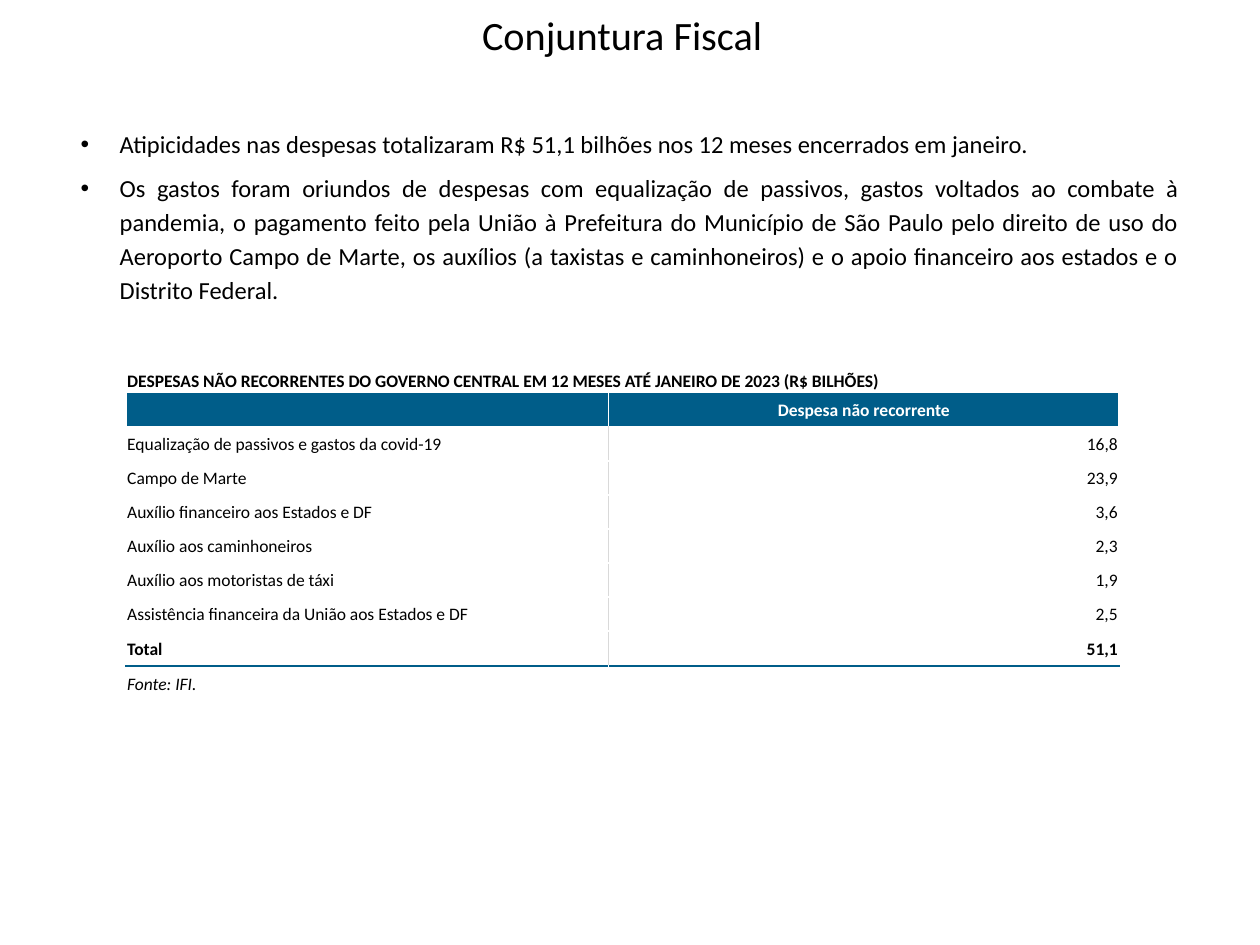
"""Build the fiscal outlook slide with its table of non-recurring expenses."""
from lxml.etree import SubElement
from pptx import Presentation
from pptx.dml.color import RGBColor
from pptx.enum.text import MSO_ANCHOR, MSO_AUTO_SIZE, PP_ALIGN
from pptx.oxml.ns import qn
from pptx.util import Inches, Pt

BLACK = RGBColor(0x00, 0x00, 0x00)
WHITE = RGBColor(0xFF, 0xFF, 0xFF)
BLUE = RGBColor(0x00, 0x5D, 0x89)
GREY = RGBColor(0xD9, 0xD9, 0xD9)


def write(paragraph, text, size, color=BLACK, **styles):
    run = paragraph.add_run()
    run.text = text
    formats = {"name": "Calibri", "size": Pt(size), "bold": False, **styles}
    for name, value in formats.items():
        setattr(run.font, name, value)
    run.font.color.rgb = color


def add_borders(cell, borders):
    properties = cell._tc.get_or_add_tcPr()
    for side in "LRTB":
        if side in borders:
            color, width = borders[side]
            line = SubElement(properties, qn(f"a:ln{side}"), w=str(Pt(width)))
            fill = SubElement(line, qn("a:solidFill"))
            SubElement(fill, qn("a:srgbClr"), val=str(color))


presentation = Presentation()
presentation.slide_width = Inches(10)
presentation.slide_height = Inches(7.5)
slide = presentation.slides.add_slide(presentation.slide_layouts[1])

heading = slide.shapes.title
heading.left, heading.top = Inches(2.96), Inches(0)
heading.width, heading.height = Inches(3.96), Inches(0.59)
heading.text_frame.vertical_anchor = MSO_ANCHOR.MIDDLE
heading_line = heading.text_frame.paragraphs[0]
heading_line.alignment = PP_ALIGN.CENTER
heading_line.line_spacing = 0.9
write(heading_line, "Conjuntura Fiscal", 23)

findings = [
    "Atipicidades nas despesas totalizaram R$ 51,1 bilhões nos 12 meses encerrados em janeiro.",
    "Os gastos foram oriundos de despesas com equalização de passivos, gastos voltados ao "
    "combate à pandemia, o pagamento feito pela União à Prefeitura do Município de São Paulo "
    "pelo direito de uso do Aeroporto Campo de Marte, os auxílios (a taxistas e caminhoneiros) "
    "e o apoio financeiro aos estados e o Distrito Federal.",
]
analysis = slide.placeholders[1]
analysis.left, analysis.top = Inches(0.54), Inches(0.94)
analysis.width, analysis.height = Inches(8.92), Inches(1.54)
analysis_frame = analysis.text_frame
analysis_frame.auto_size = MSO_AUTO_SIZE.SHAPE_TO_FIT_TEXT
finding_format = {
    "alignment": PP_ALIGN.JUSTIFY,
    "line_spacing": 1.15,
    "space_before": Pt(0),
    "space_after": Pt(6),
}
for index, finding in enumerate(findings):
    paragraph = analysis_frame.add_paragraph() if index else analysis_frame.paragraphs[0]
    for name, value in finding_format.items():
        setattr(paragraph, name, value)
    indents = paragraph._p.get_or_add_pPr()
    indents.set("marL", str(Inches(0.31)))
    indents.set("indent", str(Inches(-0.31)))
    bullet = SubElement(indents, qn("a:buChar"))
    bullet.set("char", "•")
    write(paragraph, finding, 14)

expense_rows = [
    ("DESPESAS NÃO RECORRENTES DO GOVERNO CENTRAL EM 12 MESES ATÉ JANEIRO DE 2023 (R$ BILHÕES)", ""),
    ("", "Despesa não recorrente"),
    ("Equalização de passivos e gastos da covid-19", "16,8"),
    ("Campo de Marte", "23,9"),
    ("Auxílio financeiro aos Estados e DF", "3,6"),
    ("Auxílio aos caminhoneiros", "2,3"),
    ("Auxílio aos motoristas de táxi", "1,9"),
    ("Assistência financeira da União aos Estados e DF", "2,5"),
    ("Total", "51,1"),
    ("Fonte: IFI.", ""),
]
CAPTION, HEADER, TOTAL, SOURCE = 0, 1, 8, 9
expenses = slide.shapes.add_table(
    len(expense_rows), 2, Inches(1), Inches(2.83), Inches(7.88), Inches(2.74)
).table
expenses.first_row = False
expenses.horz_banding = False
expenses.columns[0].width = Inches(3.83)
expenses.columns[1].width = Inches(4.05)
cell_format = {
    "margin_left": Inches(0.01),
    "margin_right": Inches(0.01),
    "margin_top": Inches(0.01),
    "margin_bottom": Inches(0),
}

for row, texts in enumerate(expense_rows):
    expenses.rows[row].height = Inches(0.27 if HEADER < row < TOTAL else 0.28)
    for column, text in enumerate(texts):
        cell = expenses.cell(row, column)
        for name, value in cell_format.items():
            setattr(cell, name, value)
        cell.vertical_anchor = MSO_ANCHOR.BOTTOM if row == CAPTION else MSO_ANCHOR.MIDDLE

        borders = {}
        if HEADER <= row <= TOTAL:
            borders["L" if column else "R"] = (WHITE if row == HEADER else GREY, 1)
        if row == HEADER:
            borders["B"] = (WHITE, 1)
        if row == TOTAL:
            borders["B"] = (BLUE, 1.5)
        if row == SOURCE:
            borders["T"] = (BLUE, 1.5)
        add_borders(cell, borders)
        cell.fill.solid()
        cell.fill.fore_color.rgb = BLUE if row == HEADER else WHITE

        paragraph = cell.text_frame.paragraphs[0]
        if row == HEADER:
            paragraph.alignment = PP_ALIGN.CENTER
        elif column:
            paragraph.alignment = PP_ALIGN.RIGHT
        if text:
            write(
                paragraph, text, 10, WHITE if row == HEADER else BLACK,
                bold=row in (CAPTION, HEADER, TOTAL), italic=row == SOURCE,
            )
        else:
            SubElement(paragraph._p, qn("a:endParaRPr"), sz="1000")

expenses.cell(CAPTION, 0).merge(expenses.cell(CAPTION, 1))

presentation.save("out.pptx")
